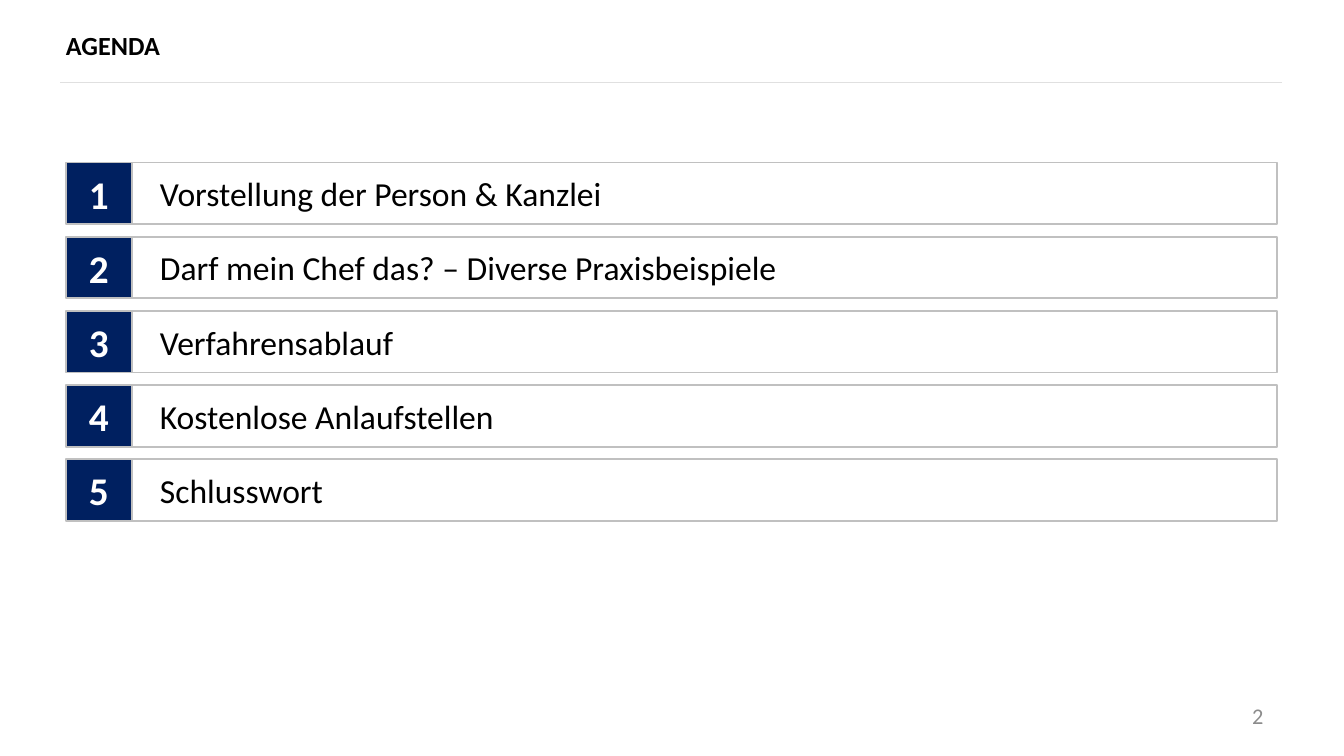
from lxml import etree
from pptx import Presentation
from pptx.dml.color import RGBColor
from pptx.enum.shapes import MSO_CONNECTOR, MSO_SHAPE
from pptx.enum.text import MSO_ANCHOR, PP_ALIGN
from pptx.oxml.ns import qn
from pptx.util import Inches, Pt

RECTANGLE = MSO_SHAPE.RECTANGLE
STRAIGHT = MSO_CONNECTOR.STRAIGHT
MIDDLE = MSO_ANCHOR.MIDDLE
LEFT, CENTER, RIGHT = PP_ALIGN.LEFT, PP_ALIGN.CENTER, PP_ALIGN.RIGHT

NAVY = RGBColor(0x00, 0x20, 0x60)
BLACK = RGBColor(0x00, 0x00, 0x00)
WHITE = RGBColor(0xFF, 0xFF, 0xFF)
BORDER_GRAY = RGBColor(0xC0, 0xC0, 0xC0)
RULE_GRAY = RGBColor(0xE0, 0xE0, 0xE0)
NUMBER_GRAY = RGBColor(0x8C, 0x8C, 0x8C)

FONT = "Calibri"
SLIDE_W = 10
SLIDE_H = SLIDE_W * 9 / 16
MARGIN = 0.49
CONTENT_W = 9.01
ROW_FILL = 0.83  # share of each grid row taken by its bar

TOPICS = [
    "Vorstellung der Person & Kanzlei",
    "Darf mein Chef das? – Diverse Praxisbeispiele",
    "Verfahrensablauf",
    "Kostenlose Anlaufstellen",
    "Schlusswort",
]


def write(shape, text, size, color, align=LEFT, bold=False, insets=(0, 0, 0, 0)):
    frame = shape.text_frame
    frame.text = text
    frame.word_wrap = True
    frame.vertical_anchor = MIDDLE
    (frame.margin_left, frame.margin_top,
     frame.margin_right, frame.margin_bottom) = map(Inches, insets)
    paragraph = frame.paragraphs[0]
    paragraph.alignment = align
    font = paragraph.runs[0].font
    font.name, font.size, font.bold = FONT, Pt(size), bold
    font.color.rgb = color


def add_bar(slide, left, top, width, height, fill=None):
    bar = slide.shapes.add_shape(
        RECTANGLE, Inches(left), Inches(top), Inches(width), Inches(height))
    bar.shadow.inherit = False
    if fill is None:
        bar.fill.background()
    else:
        bar.fill.solid()
        bar.fill.fore_color.rgb = fill
    bar.line.color.rgb = BORDER_GRAY
    bar.line.width = Pt(1)
    return bar


def add_header(slide, left, top, width, height):
    # Title
    title = slide.shapes.title
    title.left, title.top = Inches(left), Inches(top)
    title.width, title.height = Inches(width * 0.74), Inches(height)
    write(title, "AGENDA", 14, BLACK, bold=True)

    # Rule below the title, slightly wider than the content
    overhang, rule_y = 0.04, top + height * 1.21
    rule = slide.shapes.add_connector(
        STRAIGHT, Inches(left + width + overhang), Inches(rule_y),
        Inches(left - overhang), Inches(rule_y))
    rule.line.color.rgb = RULE_GRAY
    rule.line.width = Pt(0.75)
    etree.SubElement(rule._element.spPr, qn("a:effectLst"))


def add_agenda(slide, left, top, width, height):
    pitch = height / len(TOPICS)
    bar_height = pitch * ROW_FILL
    badge_width = MARGIN
    for row, topic in enumerate(TOPICS):
        y = top + row * pitch
        topic_bar = add_bar(slide, left + badge_width, y,
                            width - badge_width, bar_height)
        write(topic_bar, topic, 18, BLACK, insets=(0.21, 0.06, 0.06, 0.06))
        badge = add_bar(slide, left, y, badge_width, bar_height, NAVY)
        write(badge, str(row + 1), 21, WHITE, CENTER, bold=True)


def add_page_number(slide, left, top, width, height):
    page_number = slide.shapes.add_textbox(
        Inches(left), Inches(top), Inches(width), Inches(height))
    write(page_number, "2", 12, NUMBER_GRAY, RIGHT, insets=(0.1, 0.05, 0.1, 0.05))


def main():
    deck = Presentation()
    deck.slide_width, deck.slide_height = Inches(SLIDE_W), Inches(SLIDE_H)
    slide = deck.slides.add_slide(deck.slide_layouts[5])

    add_header(slide, MARGIN, 0.14, CONTENT_W, 0.39)
    add_agenda(slide, MARGIN, 1.21, CONTENT_W, 2.76)
    number_width = 2.33
    add_page_number(slide, MARGIN + CONTENT_W - number_width, SLIDE_H * 0.92,
                    number_width, 0.3)

    deck.save("out.pptx")


if __name__ == "__main__":
    main()
